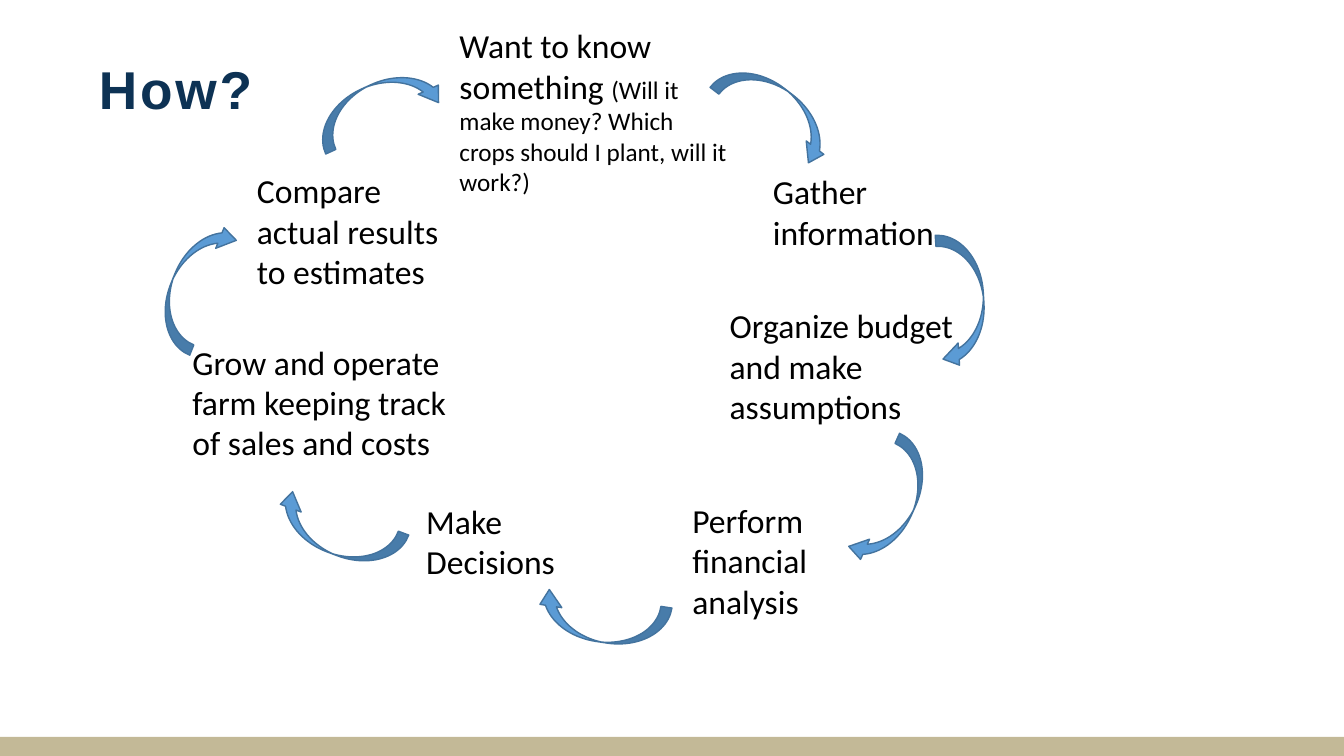
from pptx import Presentation
from pptx import util as u
from pptx.dml.color import RGBColor
from pptx.enum import shapes, text

NAVY = RGBColor(0x0D, 0x32, 0x54)
SAND = RGBColor(0xC3, 0xB9, 0x97)
BLUE = RGBColor(0x5B, 0x9B, 0xD5)
EDGE = RGBColor(0x43, 0x73, 0x9E)
BLACK = RGBColor(0, 0, 0)

WIDE, HIGH = u.Inches(13.333), u.Inches(7.5)
COLS, ROWS = 133.33, 75  # square cells, a tenth of an inch
ARROW = 4.4, 13.4        # columns and rows of every arrow


class Page:
    """Style and current slide."""
    head, body = "Arial", "Calibri"

    def __init__(self, deck):
        self.slide = deck.slides.add_slide(deck.slide_layouts[5])
        self.items = self.slide.shapes

    def box(self, col, row, cols, rows):
        x, y = WIDE / COLS, HIGH / ROWS
        return [round(n) for n in (col * x, row * y, cols * x, rows * y)]

    def run(self, para, words, size, color, face, bold=False):
        run = para.add_run()
        run.text = words
        font = run.font
        font.name, font.size, font.bold = face, u.Pt(size), bold
        font.color.rgb = color
        return run

    def title(self, words, *area):
        item = self.items.title
        item.left, item.top, item.width, item.height = self.box(*area)
        frame = item.text_frame
        frame.auto_size = text.MSO_AUTO_SIZE.NONE
        frame.vertical_anchor = text.MSO_ANCHOR.MIDDLE
        para = frame.paragraphs[0]
        para.alignment = text.PP_ALIGN.LEFT
        run = self.run(para, words, 38, NAVY, self.head, True)
        run.font._element.set("spc", "200")

    def step(self, runs, *area):
        frame = self.items.add_textbox(*self.box(*area)).text_frame
        frame.word_wrap = True
        frame.auto_size = text.MSO_AUTO_SIZE.SHAPE_TO_FIT_TEXT
        for words, size in runs:
            self.run(frame.paragraphs[0], words, size, BLACK, self.body)

    def shape(self, kind, fill, *area):
        item = self.items.add_shape(kind, *self.box(*area))
        item.shadow.inherit = False
        item.fill.solid()
        item.fill.fore_color.rgb = fill
        item.line.fill.background()
        return item

    def bar(self, *area):
        self.shape(shapes.MSO_SHAPE.RECTANGLE, SAND, *area)

    def arrow(self, col, row, turn):
        item = self.shape(shapes.MSO_SHAPE.CURVED_LEFT_ARROW, BLUE,
                          col, row, *ARROW)
        item.adjustments[2] = 0.363
        item.rotation = turn
        item.line.color.rgb = EDGE
        item.line.width = u.Pt(1)


# Steps, clockwise from the top: runs, then column, row, columns, rows
STEPS = [
    ([("Want to know something ", 24),
      ("(Will it make money? Which crops should I plant, will it work?)", 18)],
     44.6, 2, 28.6, 18.2),
    ([("Gather information", 24)], 75.7, 16.5, 18.4, 9.1),
    ([("Organize budget and make assumptions", 24)], 71.4, 29.8, 27.1, 13.1),
    ([("Perform financial analysis", 24)], 67.7, 49.1, 20.7, 13.1),
    ([("Make Decisions", 24)], 41.3, 49.2, 22.5, 9.1),
    ([("Grow and operate farm keeping track of sales and costs", 24)],
     18.1, 33.4, 29.5, 13.1),
    ([("Compare actual results to estimates", 24)], 24.5, 16.4, 22.5, 13.1),
]

# Arrow leaving each step: column, row, turn in degrees
ARROWS = [
    (74.9, 4.3, 307.5), (93.2, 23.2, 356.4), (86.3, 43.3, 24.2),
    (57.5, 54.8, 98.6), (31.3, 46.1, 110.5), (17.1, 21.5, 202.1),
    (35.3, 3.8, 245.5),
]


def main():
    deck = Presentation()
    deck.slide_width, deck.slide_height = WIDE, HIGH
    page = Page(deck)

    # Footer band and title
    page.bar(0, 73.1, COLS, 1.9)
    page.title("How?", 8.8, 5.1, 114.7, 7.4)

    # Decision cycle
    for runs, *area in STEPS:
        page.step(runs, *area)
    for spot in ARROWS:
        page.arrow(*spot)

    deck.save("out.pptx")


if __name__ == "__main__":
    main()
